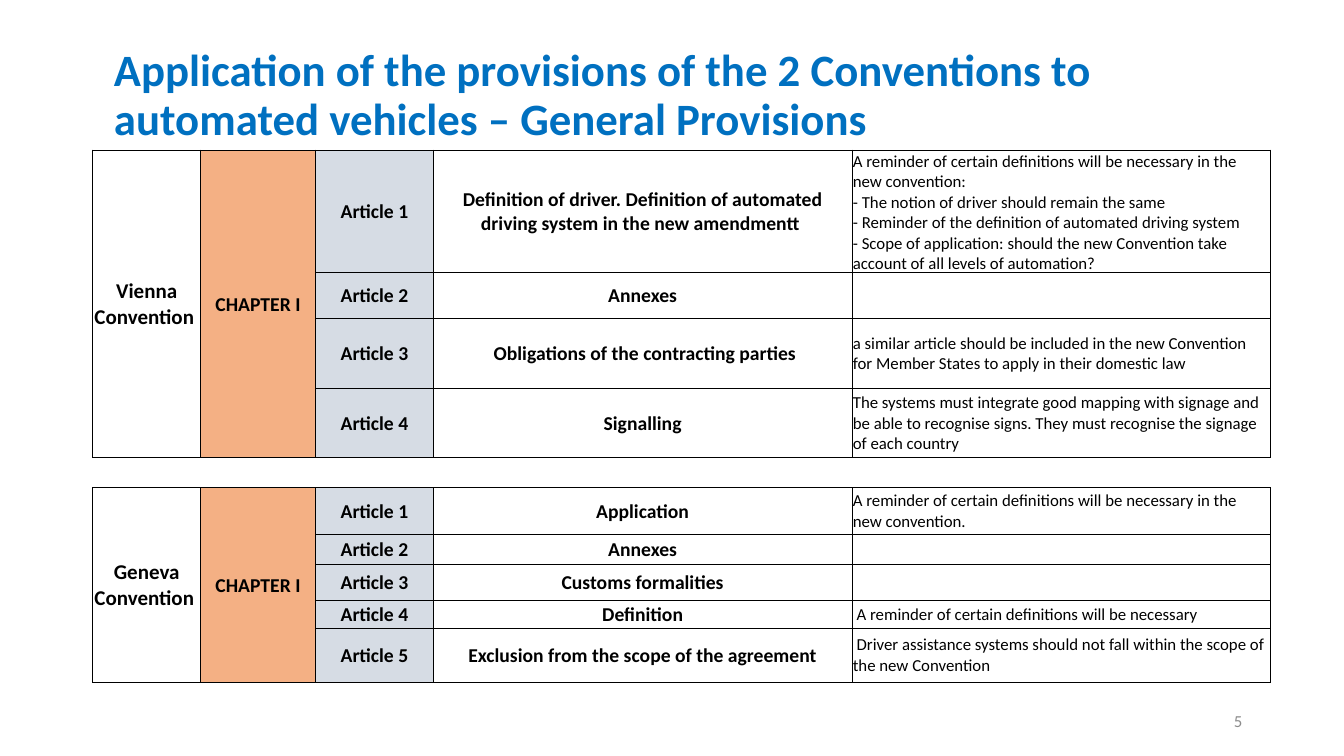
from dataclasses import dataclass

from lxml.etree import SubElement
from pptx import Presentation
from pptx.dml.color import RGBColor
from pptx.enum.text import MSO_ANCHOR, PP_ALIGN
from pptx.oxml.ns import qn
from pptx.util import Inches, Length, Pt

FONT = "Calibri"
COLOURS = {
    "title": "0070C0",
    "text": "000000",
    "number": "8C8C8C",
    "chapter": "F4B084",
    "article": "D6DCE4",
    "spacer": "FFFFFF",
}
THICK, THIN = 1.0, 0.5
SLIDE_WIDTH, SLIDE_HEIGHT = Inches(13.33), Inches(7.5)


@dataclass
class Article:
    subject: str
    remark: str
    height: float  # percent of the slide height


@dataclass
class Convention:
    name: str
    articles: list[Article]


@dataclass
class Style:
    size: float
    bold: bool = True
    align: PP_ALIGN = PP_ALIGN.CENTER
    colour: str = "text"
    fill: str | None = None


# Columns: convention, chapter, article, subject, remark
STYLES = [
    Style(15),
    Style(14, fill="chapter"),
    Style(14, fill="article"),
    Style(14),
    Style(12, bold=False, align=PP_ALIGN.LEFT),
]
COLUMN_SHARES = [8.03, 8.55, 8.78, 31.13, 31.13]
SPACER_SHARE = 4

CONVENTIONS = [
    Convention("Vienna Convention ", [
        Article("Definition of driver. Definition of automated driving system in the new amendmentt ",
                "A reminder of certain definitions will be necessary in the new convention:\n"
                "- The notion of driver should remain the same\n"
                "- Reminder of the definition of automated driving system\n"
                "- Scope of application: should the new Convention take account of all levels "
                "of automation?", 12.4),
        Article("Annexes", "", 6.13),
        Article(" Obligations of the contracting parties",
                "a similar article should be included in the new Convention for Member States "
                "to apply in their domestic law", 9.2),
        Article("Signalling",
                "The systems must integrate good mapping with signage and be able to recognise "
                "signs. They must recognise the signage of each country", 9.2),
    ]),
    Convention("Geneva Convention ", [
        Article("Application",
                "A reminder of certain definitions will be necessary in the new convention.", 6.13),
        Article("Annexes", "", 4),
        Article("Customs formalities", "", 4.8),
        Article("Definition", " A reminder of certain definitions will be necessary", 3.6),
        Article("Exclusion from the scope of the agreement",
                " Driver assistance systems should not fall within the scope of the new Convention",
                7.2),
    ]),
]


def across(percent: float) -> Length:
    return Length(round(SLIDE_WIDTH * percent / 100))


def down(percent: float) -> Length:
    return Length(round(SLIDE_HEIGHT * percent / 100))


def rgb(name: str) -> RGBColor:
    return RGBColor.from_string(COLOURS[name])


def write(frame, text: str, style: Style) -> None:
    frame.text = text
    for paragraph in frame.paragraphs:
        paragraph.alignment = style.align
        paragraph.font.name = FONT
        paragraph.font.size = Pt(style.size)
        paragraph.font.bold = style.bold
        paragraph.font.color.rgb = rgb(style.colour)
        if not text:  # keeps an empty cell from stretching its row
            SubElement(paragraph._p, qn("a:endParaRPr"), sz=str(round(style.size * 100)))


def set_borders(cell, **widths: float) -> None:
    """Edges are given by L, R, T and B; a width of zero hides the edge."""
    properties = cell._tc.get_or_add_tcPr()
    position = 0
    for side in "LRTB":
        if side not in widths:
            continue
        line = SubElement(properties, qn(f"a:ln{side}"), w=str(Pt(widths[side])))
        if widths[side]:
            SubElement(SubElement(line, qn("a:solidFill")), qn("a:srgbClr"), val=COLOURS["text"])
        else:
            SubElement(line, qn("a:noFill"))
        properties.insert(position, line)
        position += 1


def format_cell(cell, text: str, style: Style) -> None:
    cell.margin_left = cell.margin_right = cell.margin_top = Inches(0.01)
    cell.margin_bottom = 0
    cell.vertical_anchor = MSO_ANCHOR.MIDDLE
    write(cell.text_frame, text, style)
    if style.fill:
        cell.fill.solid()
        cell.fill.fore_color.rgb = rgb(style.fill)
    else:
        cell.fill.background()


def add_convention(table, convention: Convention, top: int) -> None:
    last = len(convention.articles) - 1
    for index, article in enumerate(convention.articles):
        table.rows[top + index].height = down(article.height)
        first = index == 0
        texts = [convention.name if first else "", "CHAPTER I" if first else "",
                 f"Article {index + 1}", article.subject, article.remark]
        for column, (text, style) in enumerate(zip(texts, STYLES)):
            cell = table.cell(top + index, column)
            format_cell(cell, text, style)
            edges = {"L": THICK if column == 0 else THIN,
                     "R": THICK if column == len(STYLES) - 1 else THIN}
            spans = column < 2
            if first or not spans:
                edges["T"] = THICK if first else THIN
            if index == last or first or not spans:
                edges["B"] = THICK if index == last or spans else THIN
            set_borders(cell, **edges)
    for column in range(2):
        table.cell(top, column).merge(table.cell(top + last, column))


def add_spacer(table, row: int) -> None:
    table.rows[row].height = down(SPACER_SHARE)
    for column in range(len(STYLES)):
        cell = table.cell(row, column)
        format_cell(cell, "", Style(12, fill="spacer"))
        set_borders(cell, L=0, R=0, T=THICK, B=THICK)
    table.cell(row, 0).merge(table.cell(row, len(STYLES) - 1))


def main() -> None:
    deck = Presentation()
    deck.slide_width, deck.slide_height = SLIDE_WIDTH, SLIDE_HEIGHT
    slide = deck.slides.add_slide(deck.slide_layouts[5])

    # Title
    title = slide.shapes.title
    title.left, title.top = across(7.73), down(3.07)
    title.width, title.height = across(88.75), down(19.33)
    title.text_frame.vertical_anchor = MSO_ANCHOR.MIDDLE
    write(title.text_frame, "Application of the provisions of the 2 Conventions to automated "
          "vehicles – General Provisions", Style(32, align=PP_ALIGN.LEFT, colour="title"))
    title.text_frame.paragraphs[0].line_spacing = 0.9

    # Page number
    page_number = slide.shapes.add_textbox(across(70.67), down(92.67), across(22.5), down(5.33))
    page_number.text_frame.word_wrap = True
    page_number.text_frame.vertical_anchor = MSO_ANCHOR.MIDDLE
    write(page_number.text_frame, "5", Style(12, False, PP_ALIGN.RIGHT, "number"))

    # Provisions of both conventions, with a spacer row between them
    row_count = sum(len(c.articles) for c in CONVENTIONS) + len(CONVENTIONS) - 1
    provisions = slide.shapes.add_table(row_count, len(STYLES), across(6.9), down(19.87),
                                        across(sum(COLUMN_SHARES)), down(66.66)).table
    provisions.first_row = provisions.horz_banding = False
    for column, share in zip(provisions.columns, COLUMN_SHARES):
        column.width = across(share)
    top = 0
    for convention in CONVENTIONS:
        if top:
            add_spacer(provisions, top)
            top += 1
        add_convention(provisions, convention, top)
        top += len(convention.articles)

    deck.save("out.pptx")


if __name__ == "__main__":
    main()
